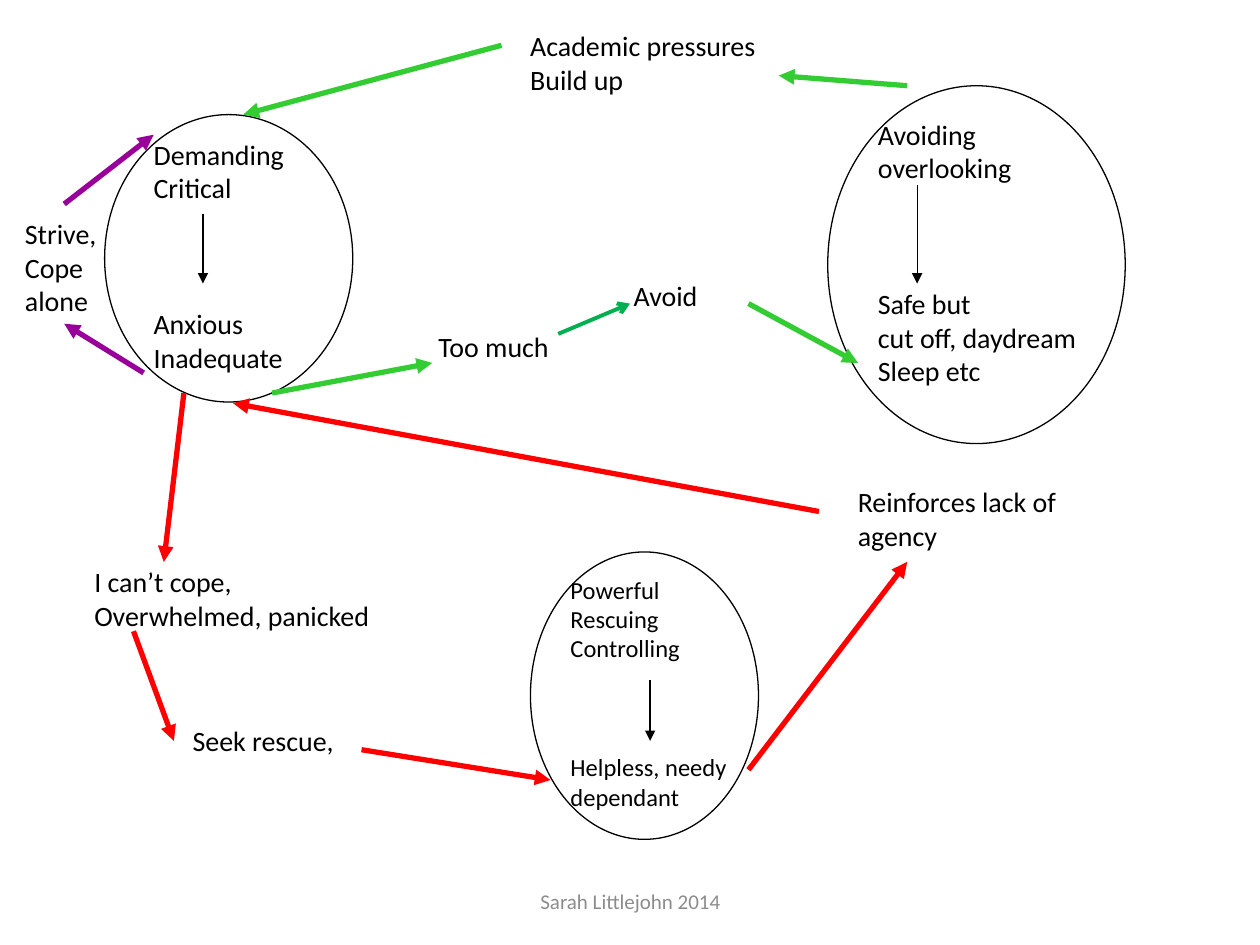
import pptx
import pptx.util
import pptx.dml.color
import pptx.enum.shapes
import pptx.enum.text
import pptx.oxml
import pptx.oxml.ns

Pt = pptx.util.Pt
INK = {"black": "000000", "purple": "990099", "lime": "33CC33",
       "red": "FF0000", "green": "00B050", "grey": "8C8C8C"}


def tint(name):
    """Return the named colour."""
    return pptx.dml.color.RGBColor.from_string(INK[name])


def arrow(slide, start, end, name="black", width=0.75, head="triangle"):
    """Draw a straight arrow between two points."""
    line = slide.shapes.add_connector(
        pptx.enum.shapes.MSO_CONNECTOR.STRAIGHT, *map(Pt, start + end))
    line.line.color.rgb = tint(name)
    line.line.width = Pt(width)
    tail = pptx.oxml.parse_xml(
        f'<a:tailEnd {pptx.oxml.ns.nsdecls("a")} type="{head}"/>')
    line.line._get_or_add_ln().append(tail)
    effect = pptx.oxml.parse_xml(f'<a:effectLst {pptx.oxml.ns.nsdecls("a")}/>')
    line._element.spPr.append(effect)


def note(slide, box, lines, size=16, name="black"):
    """Write lines of text in a box and return its frame."""
    frame = slide.shapes.add_textbox(*map(Pt, box)).text_frame
    frame.word_wrap = False
    for i, words in enumerate(lines):
        para = frame.add_paragraph() if i else frame.paragraphs[0]
        run = para.add_run()
        run.text = words
        run.font.name = "Calibri"
        run.font.size = Pt(size)
        run.font.color.rgb = tint(name)
    return frame


def state(slide, box, upper, lower, inset, stem, size=16):
    """Draw an oval whose upper role leads down to its lower role."""
    left, top, width, height = box
    oval = slide.shapes.add_shape(
        pptx.enum.shapes.MSO_SHAPE.OVAL, *map(Pt, box))
    oval.shadow.inherit = False
    oval.fill.background()
    oval.line.color.rgb = tint("black")
    oval.line.width = Pt(0.75)
    dx, dy = inset
    frame = note(slide, (left + dx, top + dy, width - dx, height - 2 * dy),
                 upper + lower, size)
    frame.paragraphs[len(upper)].space_before = Pt(round(3 * 1.22 * size, 1))
    x, y, drop = stem
    arrow(slide, (left + x, top + y), (left + x, top + y + drop))


def footer(slide, box):
    """Write the centred credit line."""
    frame = note(slide, box, ["Sarah Littlejohn 2014"], 12, "grey")
    frame.word_wrap = True
    frame.vertical_anchor = pptx.enum.text.MSO_ANCHOR.MIDDLE
    frame.paragraphs[0].alignment = pptx.enum.text.PP_ALIGN.CENTER


STATES = [
    ((59.8, 65.5, 141.8, 164.2), ["Demanding", "Critical"],
     ["Anxious", "Inadequate"], (20.9, 9.4), (56.2, 56.9, 39.6), 16),
    ((473, 49, 170, 204.5), ["Avoiding", "overlooking"],
     ["Safe but", "cut off, daydream", "Sleep etc"],
     (21.6, 14.4), (51.1, 56.9, 56.2), 16),
    ((303.1, 315.4, 130.3, 164.2), ["Powerful", "Rescuing", "Controlling"],
     ["Helpless, needy", "dependant"], (15.8, 9.4), (68.4, 73.4, 34.6), 14),
]
NOTES = [
    ((7.2, 120.2, 59.8, 64.8), ["Strive,", "Cope", "alone"]),
    ((243.4, 185, 85.7, 26.6), ["Too much"]),
    ((355, 155.5, 64.1, 26.6), ["Avoid"]),
    ((295.9, 13, 159.1, 46), ["Academic pressures", "Build up"]),
    ((46.8, 319, 190.8, 46), ["I can’t cope,", "Overwhelmed, panicked"]),
    ((103, 409.7, 100, 26.6), ["Seek rescue,"]),
    ((483.1, 273.6, 141.8, 46), ["Reinforces lack of", "agency"]),
]
PATHS = {
    "purple": [((82.1, 213.1), (36.7, 185)), ((36.7, 116.6), (87.8, 77))],
    "lime": [((155.5, 224.6), (247, 207.4)), ((427.7, 173.5), (490.3, 207.4)),
             ((518.4, 49), (445, 43.2)), ((286.6, 25.9), (139, 65.5))],
    "red": [((105.1, 224.6), (93.6, 321.1)), ((76.3, 360.7), (99.4, 423.4)),
            ((206.6, 428.4), (314.6, 445.7)), ((427.7, 439.9), (518.4, 321.1)),
            ((468, 292.3), (133.2, 230.4))],
}


def main():
    """Build the slide and save it."""
    deck = pptx.Presentation()
    deck.slide_width, deck.slide_height = Pt(720), Pt(540)
    slide = deck.slides.add_slide(deck.slide_layouts[6])
    for item in STATES:
        state(slide, *item)
    for box, lines in NOTES:
        note(slide, box, lines)
    for name, pairs in PATHS.items():
        for start, end in pairs:
            arrow(slide, start, end, name, 3)
    arrow(slide, (319, 190.8), (360, 173.5), "green", 2.25, "arrow")
    footer(slide, (246.2, 500.4, 228.2, 28.8))
    deck.save("out.pptx")


if __name__ == "__main__":
    main()
